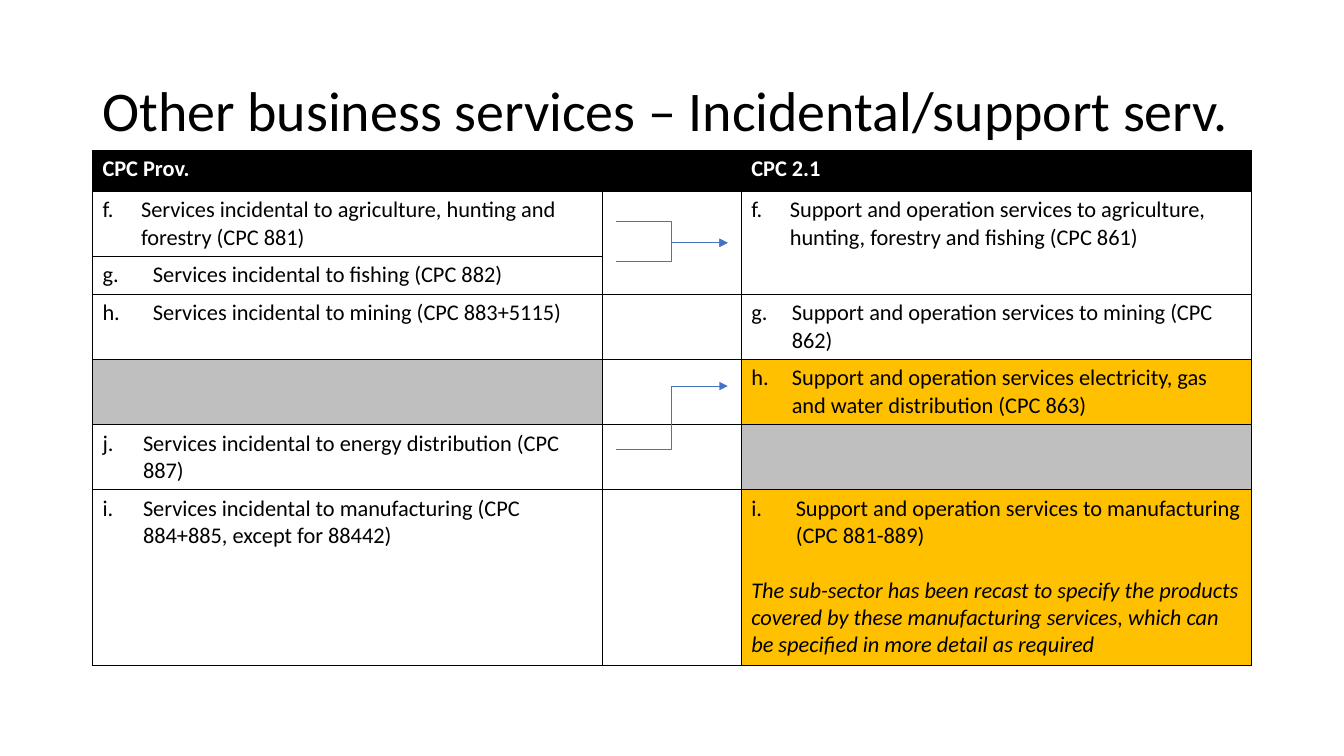
"""Builds a slide comparing two service classifications in a table."""
from pptx import Presentation
from pptx import util as u
from pptx.dml.color import RGBColor
from pptx.enum import shapes, text
from pptx.oxml import parse_xml
from pptx.oxml.ns import nsdecls

FONT = "Calibri"
BLACK, WHITE, GREY, AMBER, BLUE = "000000", "FFFFFF", "BFBFBF", "FFC000", "4472C4"


def add_run(p, wording, size, color, bold=False, italic=False):
    r = p.add_run()
    r.text = wording
    r.font.name, r.font.size = FONT, u.Pt(size)
    r.font.bold, r.font.italic = bold, italic
    r.font.color.rgb = RGBColor.from_string(color)


def xml(tag, attrs="", inner=""):
    return parse_xml(f"<a:{tag} {nsdecls('a')} {attrs}>{inner}</a:{tag}>")


prs = Presentation()
prs.slide_width, prs.slide_height = u.Cm(33.87), u.Cm(19.05)
s = prs.slides.add_slide(prs.slide_layouts[5])

title = s.shapes.title
title.left, title.top, title.width, title.height = u.Cm(2.33), u.Cm(1.01), u.Cm(29.21), u.Cm(3.68)
tf = title.text_frame
tf.word_wrap, tf.auto_size = True, text.MSO_AUTO_SIZE.NONE
tf.vertical_anchor = text.MSO_ANCHOR.MIDDLE
p = tf.paragraphs[0]
p.alignment, p.line_spacing = text.PP_ALIGN.LEFT, 0.9
add_run(p, "Other business services – Incidental/support serv.", 40, BLACK)

col_widths = [12.85, 3.5, 12.85]
row_heights = [0.93, 1.64, 0.96, 1.64, 1.64, 1.64, 4.42]
table = s.shapes.add_table(len(row_heights), len(col_widths), u.Cm(2.33), u.Cm(3.79),
                           u.Cm(sum(col_widths)), u.Cm(sum(row_heights))).table
table.first_row = table.horz_banding = False
for col, width in zip(table.columns, col_widths):
    col.width = u.Cm(width)
for row, height in zip(table.rows, row_heights):
    row.height = u.Cm(height)

fills = {(0, 0): BLACK, (0, 1): BLACK, (0, 2): BLACK,
         (4, 0): GREY, (5, 2): GREY, (4, 2): AMBER, (6, 2): AMBER}
border = f'<a:solidFill><a:srgbClr val="{BLACK}"/></a:solidFill>'
for i in range(len(row_heights)):
    for j in range(len(col_widths)):
        cell = table.cell(i, j)
        cell.fill.solid()
        cell.fill.fore_color.rgb = RGBColor.from_string(fills.get((i, j), WHITE))
        tcPr = cell._tc.get_or_add_tcPr()
        for k, side in enumerate(["lnL", "lnR", "lnT", "lnB"]):
            tcPr.insert(k, xml(side, 'w="12700"', border))
for j in (1, 2):
    table.cell(1, j).merge(table.cell(2, j))

for j, heading in [(0, "CPC Prov."), (2, "CPC 2.1")]:
    add_run(table.cell(0, j).text_frame.paragraphs[0], heading, 16, WHITE, bold=True)

letters = 'type="alphaLcPeriod" startAt="6"'
roman = 'type="romanLcPeriod"'
entries = [
    (1, 0, "Services incidental to agriculture, hunting and forestry (CPC 881)", 0.97, 1.02, letters),
    (1, 2, "Support and operation services to agriculture, hunting, forestry and fishing (CPC 861)",
     0.97, 1.02, letters),
    (2, 0, "g.\tServices incidental to fishing (CPC 882)", 0, 1.02, None),
    (3, 0, "h.\tServices incidental to mining (CPC 883+5115)", 0, 2.54, None),
    (3, 2, "g.\tSupport and operation services to mining (CPC 862)", 1.02, 1.02, None),
    (4, 2, "h.\tSupport and operation services electricity, gas and water distribution (CPC 863)",
     1.02, 1.02, None),
    (5, 0, "j.\tServices incidental to energy distribution (CPC 887)", 1.02, 1.02, None),
    (6, 0, "i.\tServices incidental to manufacturing (CPC 884+885, except for 88442)", 1.02, 1.02, None),
    (6, 2, "Support and operation services to manufacturing (CPC 881-889)", 1.12, 1.02, roman),
]
for i, j, wording, indent, tab, numbering in entries:
    p = table.cell(i, j).text_frame.paragraphs[0]
    add_run(p, wording, 16, BLACK)
    pPr = p._p.get_or_add_pPr()
    pPr.set("marL", str(u.Cm(indent)))
    pPr.set("indent", str(-u.Cm(indent)))
    if numbering:
        pPr.append(xml("buAutoNum", numbering))
    pPr.append(xml("tabLst", "", f'<a:tab pos="{u.Cm(tab)}" algn="l"/>'))

p = table.cell(6, 2).text_frame.add_paragraph()
p.space_before = u.Pt(19.5)
add_run(p, "The sub-sector has been recast to specify the products covered by these manufacturing "
           "services, which can be specified in more detail as required", 16, BLACK, italic=True)

for start_y, end_y in [(5.59, 6.12), (6.58, 6.12), (11.33, 9.73)]:
    arrow = s.shapes.add_connector(shapes.MSO_CONNECTOR.ELBOW, u.Cm(15.52), u.Cm(start_y),
                                   u.Cm(18.34), u.Cm(end_y))
    arrow.line.color.rgb = RGBColor.from_string(BLUE)
    arrow.line.width = u.Pt(0.5)
    arrow.line._get_or_add_ln().append(xml("tailEnd", 'type="triangle"'))
    arrow._element.spPr.append(xml("effectLst"))

prs.save("out.pptx")
